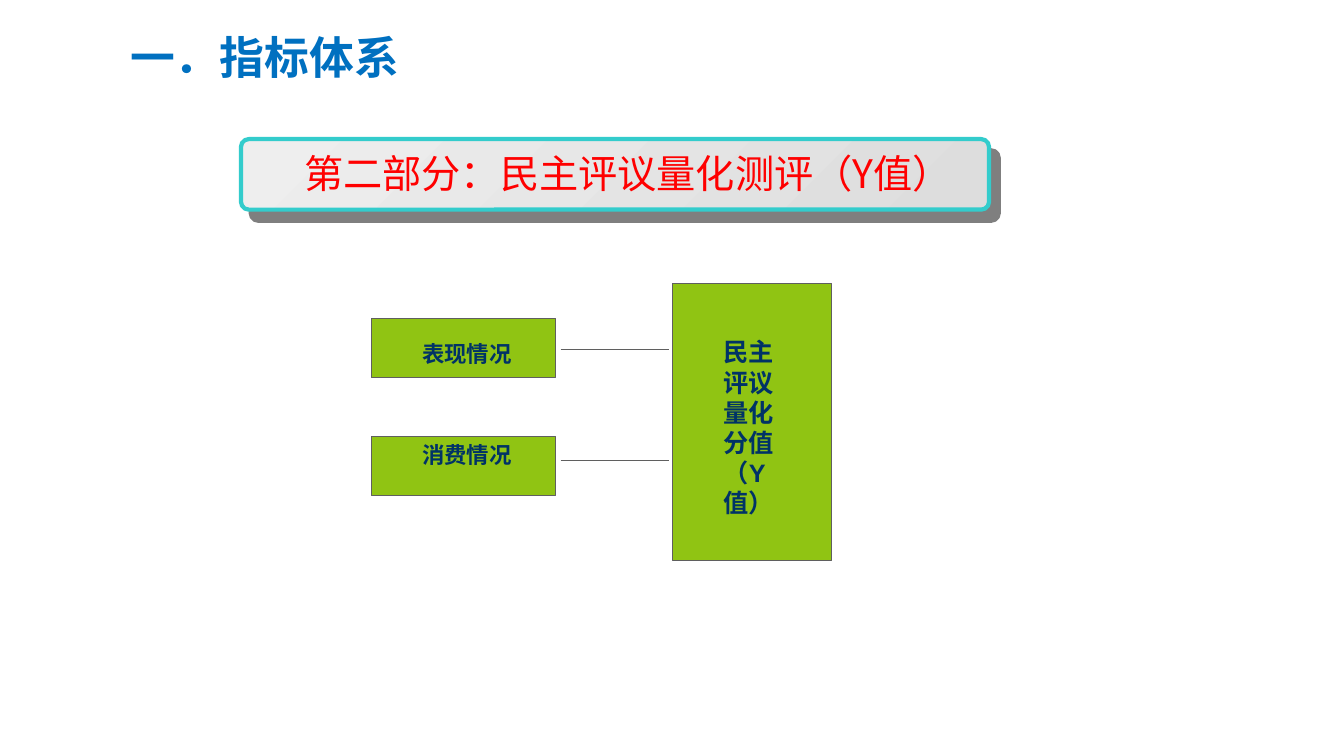
"""Builds the slide on the indicator system for the democratic appraisal score."""
import pptx
import pptx.dml.color
import pptx.enum.shapes
import pptx.enum.text
import pptx.oxml
import pptx.oxml.ns
import pptx.util

SHAPES = pptx.enum.shapes.MSO_SHAPE
ALIGN = pptx.enum.text.PP_ALIGN
CJK_FONT = "Noto Sans CJK SC"
NAVY, GREEN, GREY = "003366", "90C413", "5F5F5F"
NAMESPACE = pptx.oxml.ns.nsdecls("a")

deck = pptx.Presentation()
deck.slide_width = pptx.util.Inches(13.33)
deck.slide_height = pptx.util.Inches(7.5)
page = deck.slides.add_slide(deck.slide_layouts[5])
column = deck.slide_width / 100
row = deck.slide_height / 100


def color(value):
    return pptx.dml.color.RGBColor.from_string(value)


def write(box, text, size, font, ink, bold=False, align=ALIGN.LEFT, wrap=True):
    frame = box.text_frame
    frame.word_wrap = wrap
    frame.auto_size = pptx.enum.text.MSO_AUTO_SIZE.NONE
    frame.vertical_anchor = pptx.enum.text.MSO_ANCHOR.TOP
    para = frame.paragraphs[0]
    para.alignment = align
    span = para.add_run()
    span.text = text
    span.font.size = pptx.util.Pt(size)
    span.font.bold = bold
    span.font.name = font
    span.font.color.rgb = color(ink)
    east_asian = pptx.oxml.parse_xml(f'<a:ea {NAMESPACE} typeface="{CJK_FONT}"/>')
    span.font._element.append(east_asian)


title = page.shapes.title
title.left, title.top = int(8.93 * column), int(3.2 * row)
title.width, title.height = int(36.91 * column), int(10.67 * row)
write(title, "一．指标体系", 32, CJK_FONT, "0070C0", bold=True)

banner = page.shapes.add_shape(
    SHAPES.ROUNDED_RECTANGLE,
    int(17.93 * column), int(18.4 * row), int(55.66 * column), int(9.33 * row))
banner.adjustments[0] = 0.11
banner.fill.gradient()
banner.fill.gradient_angle = 315
for stop, shade in zip(banner.fill.gradient_stops, ("EEEEEE", "DDDDDD")):
    stop.color.rgb = color(shade)
banner.line.color.rgb = color("33CCCC")
banner.line.width = pptx.util.Pt(3)
banner.shadow.inherit = False
effects = banner._element.spPr.find(pptx.oxml.ns.qn("a:effectLst"))
effects.append(pptx.oxml.parse_xml(
    f'<a:outerShdw {NAMESPACE} blurRad="0" dist="{pptx.util.Pt(10.6)}" '
    'dir="2940000" algn="ctr" rotWithShape="0">'
    '<a:srgbClr val="000000"><a:alpha val="50000"/></a:srgbClr></a:outerShdw>'))

for left, top, width, height in (
        (27.61, 42.13, 13.73, 7.8),
        (27.61, 57.73, 13.73, 7.8),
        (50.04, 37.47, 11.85, 36.67)):
    card = page.shapes.add_shape(
        SHAPES.RECTANGLE,
        int(left * column), int(top * row), int(width * column), int(height * row))
    card.shadow.inherit = False
    card.fill.solid()
    card.fill.fore_color.rgb = color(GREEN)
    card.line.color.rgb = color(GREY)
    card.line.width = pptx.util.Pt(0.75)

for text, label_top, link_top in (
        ("表现情况", 44.27, 46.27), ("消费情况", 57.73, 60.93)):
    label = page.shapes.add_textbox(
        int(28.81 * column), int(label_top * row), int(11.85 * column), int(4.93 * row))
    write(label, text, 16, "Arial", NAVY, bold=True, align=ALIGN.CENTER)
    link = page.shapes.add_connector(
        pptx.enum.shapes.MSO_CONNECTOR.STRAIGHT,
        int(41.71 * column), int(link_top * row), int(49.81 * column), int(link_top * row))
    link.line.color.rgb = color(GREY)
    link.line.width = pptx.util.Pt(0.75)
    link._element.spPr.append(pptx.oxml.parse_xml(f"<a:effectLst {NAMESPACE}/>"))

score = page.shapes.add_textbox(
    int(53.11 * column), int(43.87 * row), int(6.9 * column), int(21.47 * row))
write(score, "民主评议量化分值（Y值）", 18, "Arial", NAVY, bold=True)

heading = page.shapes.add_textbox(
    int(21.91 * column), int(19.07 * row), int(47.71 * column), int(8.8 * row))
write(heading, "第二部分：民主评议量化测评（Y值）", 28, CJK_FONT, "FF0000", wrap=False)

deck.save("out.pptx")
